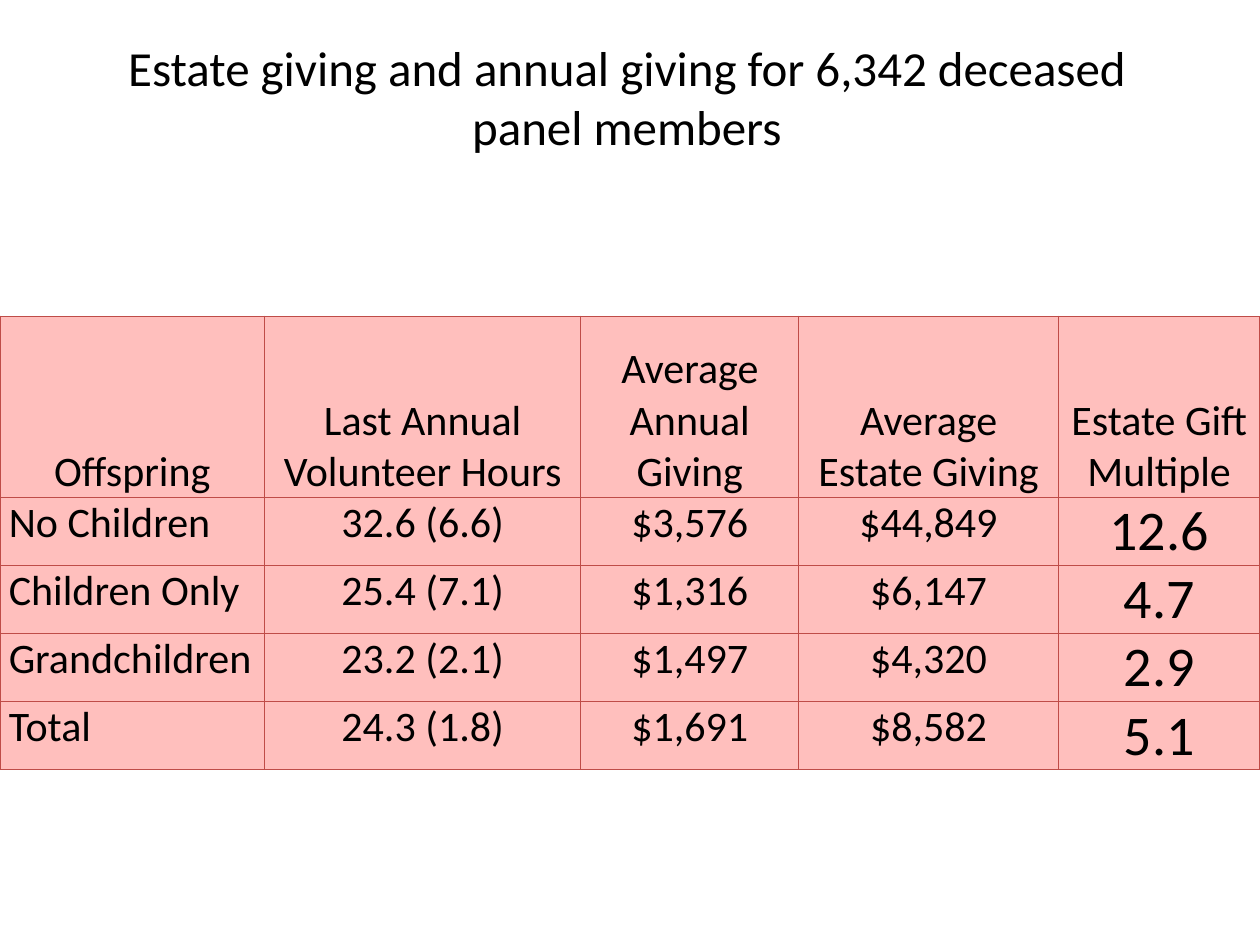
"""Build a slide with a table of estate and annual giving by offspring."""
from dataclasses import dataclass

from lxml import etree
from pptx import Presentation
from pptx.dml import color
from pptx.enum import text
from pptx.oxml import ns
from pptx.util import Inches, Pt

BLACK = color.RGBColor(0x00, 0x00, 0x00)
PINK = color.RGBColor(0xFF, 0xBF, 0xBD)
RED = color.RGBColor(0xBF, 0x4C, 0x48)

HEADER_HEIGHT = 1.44
BODY_HEIGHT = 0.54
BORDER_WIDTH = 0.75


@dataclass(frozen=True)
class Column:
    heading: str
    width: float
    values: tuple[str, ...]
    align: text.PP_ALIGN = text.PP_ALIGN.CENTER
    size: int = 24


COLUMNS = (
    Column("Offspring", 2.1, ("No Children", "Children Only", "Grandchildren", "Total"),
           align=text.PP_ALIGN.LEFT),
    Column("Last Annual Volunteer Hours", 2.51,
           ("32.6 (6.6)", "25.4 (7.1)", "23.2 (2.1)", "24.3 (1.8)")),
    Column("Average Annual Giving", 1.73, ("$3,576", "$1,316", "$1,497", "$1,691")),
    Column("Average Estate Giving", 2.06, ("$44,849", "$6,147", "$4,320", "$8,582")),
    Column("Estate Gift Multiple", 1.6, ("12.6", "4.7", "2.9", "5.1"), size=32),
)


def write_text(frame, words: str, *, size: int = 24,
               align: text.PP_ALIGN = text.PP_ALIGN.CENTER) -> None:
    para = frame.paragraphs[0]
    para.alignment = align
    span = para.add_run()
    span.text = words
    span.font.name = "Calibri"
    span.font.size = Pt(size)
    span.font.color.rgb = BLACK


def add_borders(cell) -> None:
    properties = cell._tc.get_or_add_tcPr()
    for side in ("a:lnL", "a:lnR", "a:lnT", "a:lnB"):
        line = etree.SubElement(properties, ns.qn(side), w=str(Pt(BORDER_WIDTH)))
        fill = etree.SubElement(line, ns.qn("a:solidFill"))
        etree.SubElement(fill, ns.qn("a:srgbClr"), val=str(RED))


def style_cell(cell, anchor: text.MSO_ANCHOR) -> None:
    cell.margin_left = cell.margin_right = Inches(0.07)
    cell.margin_top = cell.margin_bottom = Inches(0)
    cell.vertical_anchor = anchor
    add_borders(cell)
    cell.fill.solid()
    cell.fill.fore_color.rgb = PINK


def add_title(page, words: str) -> None:
    box = page.shapes.add_textbox(Inches(0.5), Inches(0.25), Inches(8.95), Inches(1.03))
    box.text_frame.word_wrap = True
    box.text_frame.vertical_anchor = text.MSO_ANCHOR.MIDDLE
    write_text(box.text_frame, words, size=28)


def add_giving_table(page, columns: tuple[Column, ...]) -> None:
    body_count = len(columns[0].values)
    height = HEADER_HEIGHT + body_count * BODY_HEIGHT
    table = page.shapes.add_table(body_count + 1, len(columns), Inches(0), Inches(2.51),
                                  Inches(10), Inches(height)).table
    table.first_row = table.horz_banding = False
    for index, row in enumerate(table.rows):
        row.height = Inches(BODY_HEIGHT if index else HEADER_HEIGHT)
    for across, column in enumerate(columns):
        table.columns[across].width = Inches(column.width)
        heading = table.cell(0, across)
        style_cell(heading, text.MSO_ANCHOR.BOTTOM)
        write_text(heading.text_frame, column.heading)
        for down, value in enumerate(column.values, start=1):
            cell = table.cell(down, across)
            style_cell(cell, text.MSO_ANCHOR.TOP)
            write_text(cell.text_frame, value, size=column.size, align=column.align)


def main() -> None:
    deck = Presentation()
    deck.slide_width, deck.slide_height = Inches(10), Inches(7.5)
    page = deck.slides.add_slide(deck.slide_layouts[6])
    add_title(page, "Estate giving and annual giving for 6,342 deceased panel members")
    add_giving_table(page, COLUMNS)
    deck.save("out.pptx")


if __name__ == "__main__":
    main()
